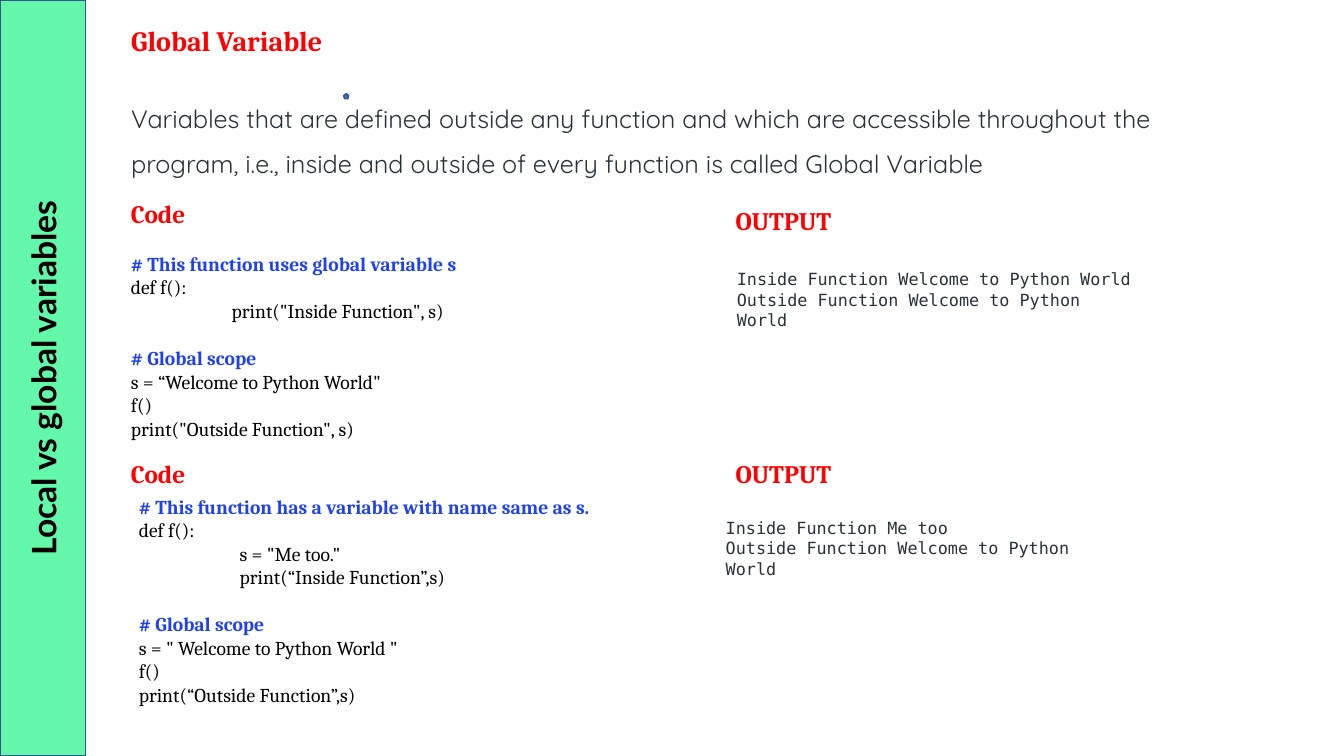
from collections import namedtuple
from dataclasses import dataclass

from pptx import Presentation
from pptx.dml.color import RGBColor
from pptx.enum.shapes import MSO_SHAPE
from pptx.enum.text import MSO_ANCHOR, MSO_AUTO_SIZE, PP_ALIGN
from pptx.util import Cm, Pt

RECTANGLE, PENTAGON = MSO_SHAPE.RECTANGLE, MSO_SHAPE.REGULAR_PENTAGON
TOP, MIDDLE = MSO_ANCHOR.TOP, MSO_ANCHOR.MIDDLE
LEFT, CENTER = PP_ALIGN.LEFT, PP_ALIGN.CENTER
NO_AUTOFIT = MSO_AUTO_SIZE.NONE

TITLE_AND_CONTENT = 1
CODE_INDENT = Cm(2.54)
CODE_LINE = Pt(16.8)

Box = namedtuple("Box", "left top width height")
Style = namedtuple("Style", "font size color bold")


def rgb(value):
    return RGBColor.from_string(value)


@dataclass(frozen=True)
class Theme:
    band = rgb("63F7A9")
    marker = rgb("4472C4")
    outline = rgb("325491")
    topic = Style("Lato", 24, rgb("000000"), True)
    title = Style("Cambria", 20, rgb("FF0000"), True)
    heading = Style("Cambria", 18, rgb("FF0000"), True)
    definition = Style("Quicksand", 18, rgb("273239"), False)
    comment = Style("Cambria", 14, rgb("2042EC"), True)
    code = Style("Cambria", 14, rgb("000000"), False)
    output = Style("DejaVu Sans Mono", 12, rgb("273239"), False)


THEME = Theme()


@dataclass(frozen=True)
class Example:
    box: Box
    output_heading_drop: float
    code_offset: tuple
    output_offset: tuple
    code: tuple  # (indent level, line); a second comment opens a new block
    output: str


EXAMPLES = (
    Example(
        Box(3.05, 4.88, 26, 6.4), 0.17, (0, 1.34), (15.52, 2.16),
        (
            (0, "# This function uses global variable s"),
            (0, "def f():"),
            (1, 'print("Inside Function", s)'),
            (0, "# Global scope"),
            (0, 's = “Welcome to Python World"'),
            (0, "f()"),
            (0, 'print("Outside Function", s)'),
        ),
        "Inside Function Welcome to Python World "
        "Outside Function Welcome to Python World",
    ),
    Example(
        Box(3.05, 11.43, 26, 6.55), 0, (0.2, 0.91), (15.24, 1.88),
        (
            (0, "# This function has a variable with name same as s."),
            (0, "def f():"),
            (1, 's = "Me too."'),
            (1, "print(“Inside Function”,s)"),
            (0, "# Global scope"),
            (0, 's = " Welcome to Python World "'),
            (0, "f()"),
            (0, "print(“Outside Function”,s)"),
        ),
        "Inside Function Me too\nOutside Function Welcome to Python World",
    ),
)


def format_runs(paragraph, style):
    for run in paragraph.runs:
        run.font.name = style.font
        run.font.size = Pt(style.size)
        run.font.color.rgb = style.color
        run.font.bold = style.bold


def write(frame, text, style, align=LEFT, anchor=TOP):
    frame.text = text
    frame.word_wrap = True
    frame.auto_size = NO_AUTOFIT
    frame.vertical_anchor = anchor
    for paragraph in frame.paragraphs:
        paragraph.alignment = align
        format_runs(paragraph, style)


def add_text(slide, box, text, style, anchor=TOP):
    frame = slide.shapes.add_textbox(*map(Cm, box)).text_frame
    write(frame, text, style, anchor=anchor)
    return frame


def place(placeholder, box):
    placeholder.left, placeholder.top, placeholder.width, placeholder.height = map(Cm, box)


def add_filled(slide, kind, box, fill):
    shape = slide.shapes.add_shape(kind, *map(Cm, box))
    shape.shadow.inherit = False
    shape.fill.solid()
    shape.fill.fore_color.rgb = fill
    shape.line.color.rgb = THEME.outline
    shape.line.width = Pt(1)
    return shape


def add_topic_band(slide, box):
    band = add_filled(slide, RECTANGLE, box, THEME.band)
    write(band.text_frame, "Local vs global variables", THEME.topic, CENTER, MIDDLE)
    band.element.txBody.bodyPr.set("vert", "vert270")


def add_introduction(slide, box):
    title = slide.shapes.title
    place(title, Box(box.left, box.top, 16.36, 1.12))
    write(title.text_frame, "Global Variable", THEME.title)

    definition = slide.placeholders[1]
    place(definition, Box(box.left, box.top + 1.63, box.width, box.height - 1.63))
    write(
        definition.text_frame,
        "Variables that are defined outside any function and which are accessible "
        "throughout the program, i.e., inside and outside of every function is "
        "called Global Variable",
        THEME.definition,
    )
    paragraph = definition.text_frame.paragraphs[0]
    paragraph.line_spacing = 1.5
    paragraph.space_before = Pt(0)
    # Plain text instead of a bullet
    properties = paragraph._p.get_or_add_pPr()
    properties.set("marL", "0")
    properties.set("indent", "0")
    properties.append(properties.makeelement(
        "{http://schemas.openxmlformats.org/drawingml/2006/main}buNone", {}))


def add_code(slide, box, lines):
    frame = add_text(slide, box, "\n".join(line for _, line in lines), THEME.code)
    for number, (paragraph, (level, line)) in enumerate(zip(frame.paragraphs, lines)):
        paragraph._p.get_or_add_pPr().set("marL", str(level * CODE_INDENT))
        if line.startswith("#"):
            format_runs(paragraph, THEME.comment)
            if number:
                paragraph.space_before = CODE_LINE


def add_example(slide, example):
    box = example.box
    # Headings
    add_text(slide, Box(box.left, box.top, 3.1, 1.02), "Code", THEME.heading)
    add_text(slide, Box(box.left + 15.24, box.top + example.output_heading_drop, 3.1, 1.02),
             "OUTPUT", THEME.heading)
    # Code listing
    code_left, code_top = example.code_offset
    add_code(slide, Box(box.left + code_left, box.top + code_top, 13.08, box.height - code_top),
             example.code)
    # Program output
    output_left, output_top = example.output_offset
    frame = add_text(slide, Box(box.left + output_left, box.top + output_top, 10.16, 1.19),
                     example.output, THEME.output, MIDDLE)
    frame.margin_left = frame.margin_top = frame.margin_right = 0
    frame.margin_bottom = Cm(0.18)


def main():
    deck = Presentation()
    deck.slide_width, deck.slide_height = Cm(33.87), Cm(19.05)
    slide = deck.slides.add_slide(deck.slide_layouts[TITLE_AND_CONTENT])

    add_filled(slide, PENTAGON, Box(8.66, 2.36, 0.13, 0.13), THEME.marker)
    add_topic_band(slide, Box(0, 0, 2.16, 19.05))
    add_introduction(slide, Box(3.05, 0.46, 29.08, 4.09))
    for example in EXAMPLES:
        add_example(slide, example)

    deck.save("out.pptx")


if __name__ == "__main__":
    main()
